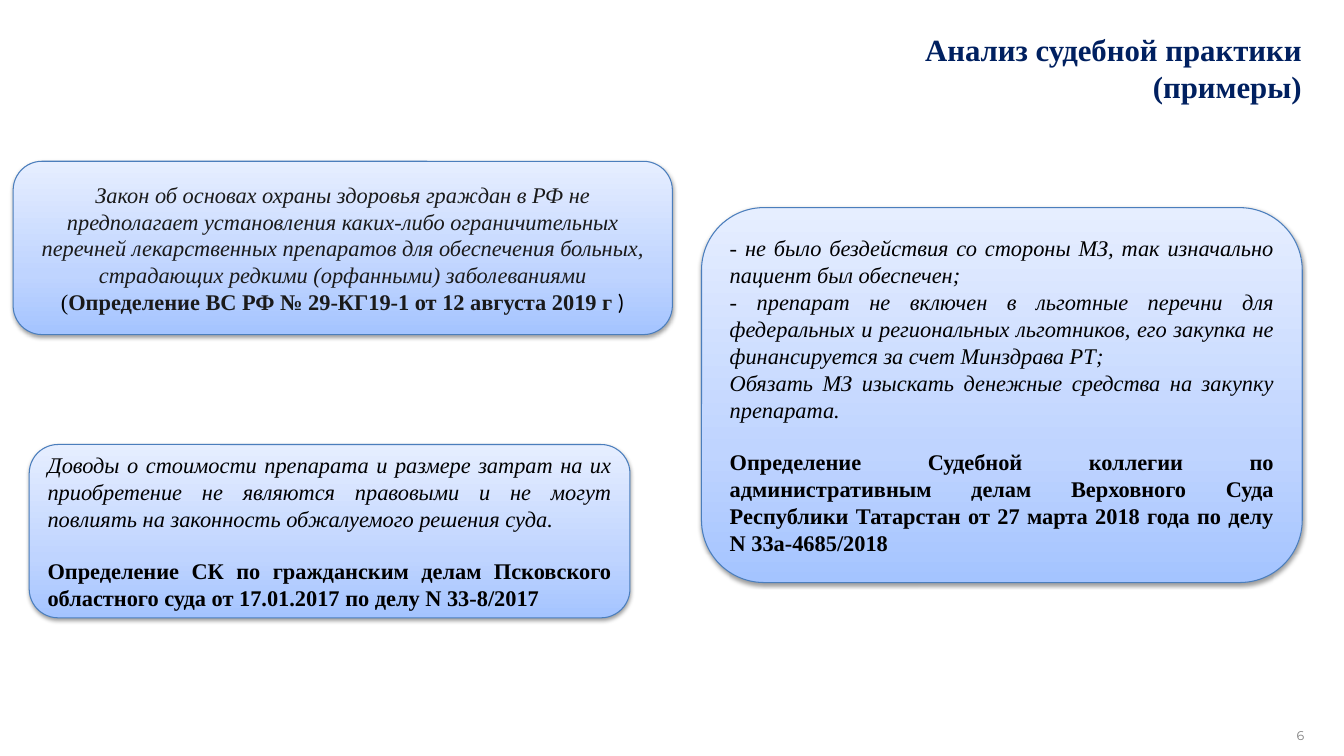
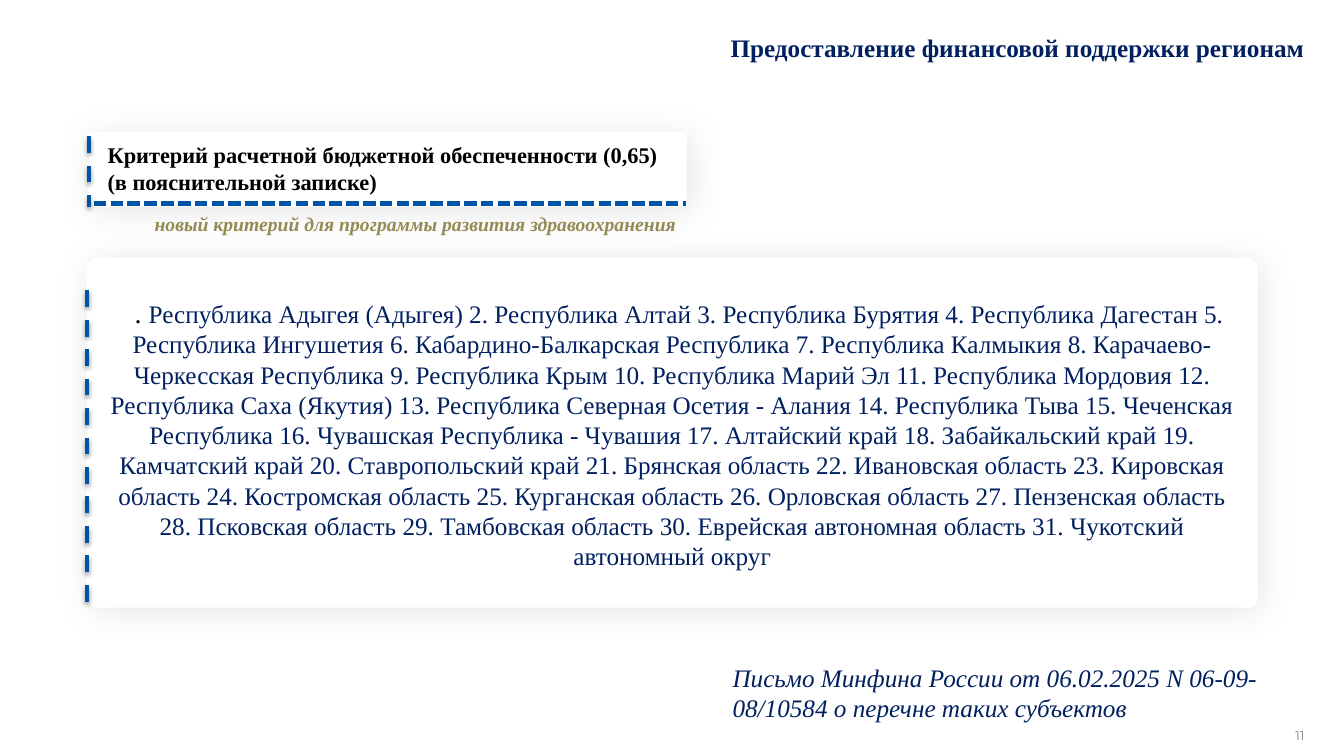
from lxml import etree
from pptx import Presentation
from pptx import util as u
from pptx.dml.color import RGBColor
from pptx.enum import dml, shapes, text as tx
from pptx.oxml.ns import qn

NAVY, BLUE, BLACK, WHITE = "002060", "0054A7", "000000", "FFFFFF"
DARK, EDGE, GRAY, GOLD = "1A1A1A", "4B7EBC", "808080", "948A54"
SERIF = "Times New Roman"
FADE = [(0, "A4C4FF"), (35, "BFD4FF"), (100, "E6EEFF")]
# Shadows: opacity %, blur, distance, angle
TIGHT = (38, 3.1, 1.6, 90)
SOFT = (10, 25, 4, 45)
LOW = (35, 3.1, 1.8, 90)
SIDES = {"l": tx.PP_ALIGN.LEFT, "c": tx.PP_ALIGN.CENTER,
         "r": tx.PP_ALIGN.RIGHT, "j": tx.PP_ALIGN.JUSTIFY}


def color(code):
    return RGBColor.from_string(code)


def pts(*nums):
    return [u.Pt(n) for n in nums]


# Text: each paragraph is a string or a list of (string, format) runs
def write(shape, paras, align="l", gap=0, indent=0, mid=False, **base):
    """Fill a shape with text; gap is the space above the last paragraph."""
    frame = shape.text_frame
    frame.word_wrap = True
    frame.vertical_anchor = tx.MSO_ANCHOR.MIDDLE if mid else tx.MSO_ANCHOR.TOP
    for i, runs in enumerate(paras):
        para = frame.paragraphs[0] if i == 0 else frame.add_paragraph()
        para.alignment = SIDES[align]
        if gap and i == len(paras) - 1:
            para.space_before = u.Pt(gap)
        if indent:
            para._p.get_or_add_pPr().set("indent", str(u.Pt(indent)))
        for words, own in [(runs, {})] if isinstance(runs, str) else runs:
            fmt = {"size": 16, "face": SERIF, "ink": BLACK, **base, **own}
            run = para.add_run()
            run.text = words
            font = run.font
            font.name, font.size = fmt["face"], u.Pt(fmt["size"])
            font.bold = fmt.get("bold", False)
            font.italic = fmt.get("slant", False)
            font.color.rgb = color(fmt["ink"])


def label(slide, area, paras, **fmt):
    write(slide.shapes.add_textbox(*pts(*area)), paras, **fmt)


# Effects
def shade(shape, look=None):
    """Replace the theme shadow by the given one, or by none."""
    props = shape._element.spPr
    effect = etree.SubElement(props, qn("a:effectLst"))
    if look:
        alpha, blur, dist, angle = look
        drop = etree.SubElement(
            effect, qn("a:outerShdw"), blurRad=str(u.Pt(blur)),
            dist=str(u.Pt(dist)), dir=str(angle * 60000), rotWithShape="0")
        tint = etree.SubElement(drop, qn("a:srgbClr"), val=BLACK)
        etree.SubElement(tint, qn("a:alpha"), val=str(alpha * 1000))


def blend(shape):
    """Give a shape the three-stop fade, dark at the bottom."""
    shape.fill.gradient()
    shape.fill.gradient_angle = 90
    stops = shape._element.spPr.find(".//" + qn("a:gsLst"))
    stops.clear()
    for place, code in FADE:
        stop = etree.SubElement(stops, qn("a:gs"), pos=str(place * 1000))
        etree.SubElement(stop, qn("a:srgbClr"), val=code)


# Boxes and rules
def plate(slide, area):
    return slide.shapes.add_shape(shapes.MSO_SHAPE.ROUNDED_RECTANGLE,
                                  *pts(*area))


def case(slide, area, paras, **fmt):
    box = plate(slide, area)
    blend(box)
    box.line.color.rgb = color(EDGE)
    box.line.width = u.Pt(0.75)
    shade(box, TIGHT)
    write(box, paras, mid=True, **fmt)


def card(slide, area):
    box = plate(slide, area)
    box.adjustments[0] = 0.03
    box.fill.solid()
    box.fill.fore_color.rgb = color(WHITE)
    box.line.fill.background()
    shade(box, SOFT)
    return box


def rule(slide, ends, dash=dml.MSO_LINE.DASH, look=None):
    line = slide.shapes.add_connector(shapes.MSO_CONNECTOR.STRAIGHT,
                                      *pts(*ends))
    line.line.color.rgb = color(BLUE)
    line.line.width = u.Pt(3)
    line.line.dash_style = dash
    shade(line, look)


# Shared page parts
def page(deck, num, area, title, **fmt):
    slide = deck.slides.add_slide(deck.slide_layouts[6])
    label(slide, area, title, ink=NAVY, bold=True, **fmt)
    label(slide, (874.8, 511.2, 64, 28.8), [num], align="r", mid=True,
          size=9, face="Montserrat", ink=GRAY)
    return slide


def courts(deck):
    slide = page(deck, "6", (617.8, 18.7, 319, 60.5),
                 ["Анализ судебной практики", "(примеры)"],
                 size=22, align="r")
    case(slide, (9.4, 115.2, 470.9, 123.8), [[
        ("Закон об основах охраны здоровья граждан в РФ не предполагает "
         "установления каких-либо ограничительных перечней лекарственных "
         "препаратов для обеспечения больных, страдающих редкими "
         "(орфанными) заболеваниями ", {"slant": True}),
        ("(", {"ink": BLACK}),
        ("Определение ВС РФ № 29-КГ19-1 от 12 августа 2019 г",
         {"bold": True}),
        (" )", {"face": "Calibri", "ink": BLACK}),
    ]], align="c", ink=DARK)
    case(slide, (20.9, 317.5, 429.1, 123.8), [
        [("Доводы о стоимости препарата и размере затрат на их приобретение "
          "не являются правовыми и не могут повлиять на законность "
          "обжалуемого решения суда.", {"slant": True})],
        [("Определение СК по гражданским делам Псковского областного суда "
          "от 17.01.2017 по делу N 33-8/2017", {"bold": True})],
    ], align="j", gap=18.4)
    case(slide, (501.1, 148.3, 429.1, 267.8), [
        [("- ", {}),
         ("не было бездействия со стороны МЗ, так изначально пациент был "
          "обеспечен;", {"slant": True})],
        [("- препарат не включен в льготные перечни для федеральных и "
          "региональных льготников, его закупка не финансируется за счет "
          "Минздрава РТ;", {"slant": True})],
        [("Обязать МЗ изыскать денежные средства на закупку препарата.",
          {"slant": True})],
        [("Определение Судебной коллегии по административным делам "
          "Верховного Суда Республики Татарстан от 27 марта 2018 года по "
          "делу N 33а-4685/2018", {"bold": True})],
    ], align="j", gap=18.4)


def funds(deck):
    slide = page(deck, "11", (514.8, 19.4, 424.8, 28.8),
                 ["Предоставление финансовой поддержки регионам"], size=18)
    # List of regions
    write(card(slide, (61.9, 184.3, 836.6, 249.8)), [[
        (". ", {"size": 20, "ink": BLACK}),
        ("Республика Адыгея (Адыгея) 2. Республика Алтай 3. Республика "
         "Бурятия 4. Республика Дагестан 5. Республика Ингушетия "
         "6. Кабардино-Балкарская Республика 7. Республика Калмыкия "
         "8. Карачаево-Черкесская Республика 9. Республика Крым "
         "10. Республика Марий Эл 11. Республика Мордовия 12. Республика "
         "Саха (Якутия) 13. Республика Северная Осетия - Алания "
         "14. Республика Тыва 15. Чеченская Республика 16. Чувашская "
         "Республика - Чувашия 17. Алтайский край 18. Забайкальский край "
         "19. Камчатский край 20. Ставропольский край 21. Брянская область "
         "22. Ивановская область 23. Кировская область 24. Костромская "
         "область 25. Курганская область 26. Орловская область "
         "27. Пензенская область 28. Псковская область 29. Тамбовская "
         "область 30. Еврейская автономная область 31. Чукотский "
         "автономный округ", {}),
    ]], align="c", indent=10, mid=True, size=18, ink=NAVY)
    rule(slide, (61.9, 207.4, 61.9, 434.2), look=LOW)
    # Criterion
    card(slide, (63.4, 94.3, 427, 53.3))
    label(slide, (69.8, 97.2, 417.6, 46.1),
          ["Критерий расчетной бюджетной обеспеченности (0,65)",
           "(в пояснительной записке)"], bold=True)
    rule(slide, (67, 145.4, 490.3, 145.4), dash=dml.MSO_LINE.SQUARE_DOT)
    rule(slide, (63.4, 97.2, 63.4, 147.6), look=LOW)
    label(slide, (87.1, 147.6, 403.2, 24.5),
          ["новый критерий для программы развития здравоохранения"],
          align="r", size=14, ink=GOLD, bold=True, slant=True)
    # Source letter
    label(slide, (516.2, 469.4, 421.9, 51.1),
          ["Письмо Минфина России от 06.02.2025 N 06-09-08/10584 о перечне "
           "таких субъектов"], size=18, ink=NAVY, slant=True)


def main():
    deck = Presentation()
    deck.slide_width, deck.slide_height = pts(960, 540)
    courts(deck)
    funds(deck)
    deck.save("out.pptx")


if __name__ == "__main__":
    main()
